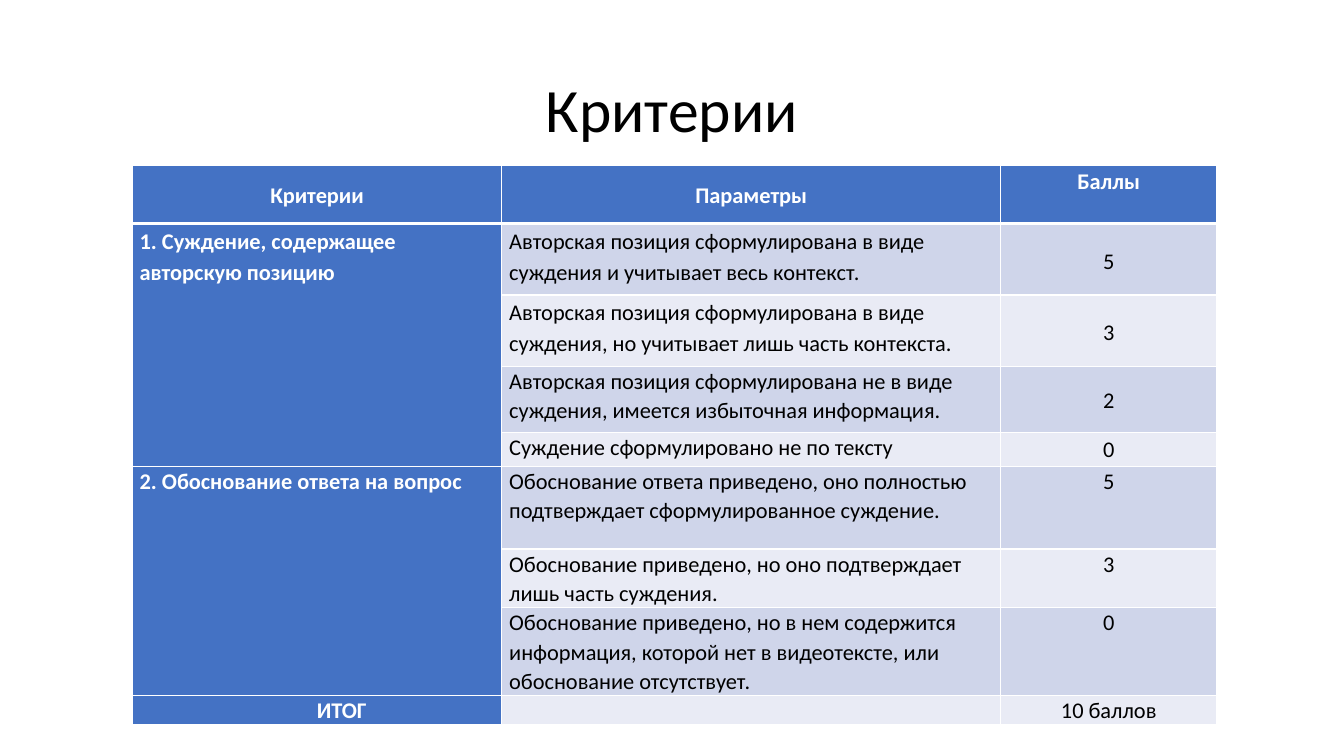
from dataclasses import dataclass
from typing import Optional

import pptx
import pptx.dml.color
import pptx.enum.text
import pptx.oxml
import pptx.oxml.ns
import pptx.table
import pptx.text.text
import pptx.util

RGBColor = pptx.dml.color.RGBColor
Align = pptx.enum.text.PP_ALIGN
Anchor = pptx.enum.text.MSO_ANCHOR

BLUE = RGBColor(0x44, 0x72, 0xC4)
BAND_DARK = RGBColor(0xCF, 0xD5, 0xEA)
BAND_LIGHT = RGBColor(0xE9, 0xEB, 0xF5)
WHITE = RGBColor(0xFF, 0xFF, 0xFF)
BLACK = RGBColor(0x00, 0x00, 0x00)

FONT = "Calibri"
TITLE_SIZE = 44
TABLE_SIZE = 16
NORMAL_SPACING = 1.07
WIDE_SPACING = 1.15
EMU_PER_PX = 9525
TABLE_LEFT, TABLE_TOP = 126, 158
COLUMN_WIDTHS = (352, 475, 206)
HEADER_HEIGHT, TOTAL_HEIGHT = 55, 24
TOTAL_INDENT = 47
CELL_MARGIN = 7


@dataclass(frozen=True)
class CellStyle:
    fill: RGBColor
    color: RGBColor = BLACK
    bold: bool = False
    align: Align = Align.LEFT
    anchor: Anchor = Anchor.TOP
    spacing: float = NORMAL_SPACING


@dataclass(frozen=True)
class Level:
    parameter: str
    score: str
    height: int
    spacing: float = NORMAL_SPACING


@dataclass(frozen=True)
class Criterion:
    name: str
    spacing: float
    score_anchor: Anchor
    levels: tuple[Level, ...]


HEADERS = (
    ("Критерии", Anchor.MIDDLE),
    ("Параметры", Anchor.MIDDLE),
    ("Баллы", Anchor.TOP),
)
CRITERIA = (
    Criterion("1. Суждение, содержащее авторскую позицию", WIDE_SPACING, Anchor.MIDDLE, (
        Level("Авторская позиция сформулирована в виде суждения и учитывает весь контекст.",
              "5", 68, WIDE_SPACING),
        Level("Авторская позиция сформулирована в виде суждения, но учитывает лишь часть контекста.",
              "3", 68, WIDE_SPACING),
        Level("Авторская позиция сформулирована не в виде суждения, имеется избыточная информация.",
              "2", 63),
        Level("Суждение сформулировано не по тексту", "0", 32),
    )),
    Criterion("2. Обоснование ответа на вопрос", NORMAL_SPACING, Anchor.TOP, (
        Level("Обоснование ответа приведено, оно полностью подтверждает сформулированное суждение.",
              "5", 79),
        Level("Обоснование приведено, но оно подтверждает лишь часть суждения.", "3", 47),
        Level("Обоснование приведено, но в нем содержится информация, которой нет в видеотексте, "
              "или обоснование отсутствует.", "0", 79),
    )),
)


def px(length: int) -> pptx.util.Emu:
    return pptx.util.Emu(length * EMU_PER_PX)


def add_span(para: pptx.text.text._Paragraph, text: str, size: int,
             color: RGBColor, bold: bool = False) -> None:
    span = para.add_run()
    span.text = text
    span.font.name = FONT
    span.font.size = pptx.util.Pt(size)
    span.font.bold = bold
    span.font.color.rgb = color


def set_borders(cell: pptx.table._Cell, top: int = 1, bottom: int = 1) -> None:
    properties = cell._tc.get_or_add_tcPr()
    widths = {"lnL": 1, "lnR": 1, "lnT": top, "lnB": bottom}
    for position, (side, points) in enumerate(widths.items()):
        line = pptx.oxml.parse_xml(
            f'<a:{side} {pptx.oxml.ns.nsdecls("a")} w="{pptx.util.Pt(points)}">'
            f'<a:solidFill><a:srgbClr val="{WHITE}"/></a:solidFill></a:{side}>')
        properties.insert(position, line)


def fill_cell(cell: pptx.table._Cell, text: Optional[str], style: CellStyle) -> None:
    """Format a cell; without text, only keep its empty line at table size."""
    cell.fill.solid()
    cell.fill.fore_color.rgb = style.fill
    cell.margin_left = cell.margin_right = px(CELL_MARGIN)
    cell.margin_top = cell.margin_bottom = 0
    cell.vertical_anchor = style.anchor
    para = cell.text_frame.paragraphs[0]
    para.alignment = style.align
    para.line_spacing = style.spacing
    if text:
        add_span(para, text, TABLE_SIZE, style.color, style.bold)
    else:
        para._p.append(pptx.oxml.parse_xml(
            f'<a:endParaRPr {pptx.oxml.ns.nsdecls("a")} sz="{TABLE_SIZE * 100}"/>'))


def fill_criteria(table: pptx.table.Table) -> None:
    row = 1
    for criterion in CRITERIA:
        first = row
        for level in criterion.levels:
            band = BAND_DARK if row % 2 else BAND_LIGHT
            fill_cell(table.cell(row, 0), criterion.name if row == first else None,
                      CellStyle(BLUE, WHITE, True, spacing=criterion.spacing))
            fill_cell(table.cell(row, 1), level.parameter,
                      CellStyle(band, spacing=level.spacing))
            fill_cell(table.cell(row, 2), level.score,
                      CellStyle(band, align=Align.CENTER, anchor=criterion.score_anchor,
                                spacing=level.spacing))
            row += 1
        table.cell(first, 0).merge(table.cell(row - 1, 0))


def fill_total(table: pptx.table.Table, row: int) -> None:
    label, blank, score = (table.cell(row, column) for column in range(3))
    fill_cell(label, "ИТОГ", CellStyle(BLUE, WHITE, True, Align.CENTER))
    label_properties = label.text_frame.paragraphs[0]._p.get_or_add_pPr()
    label_properties.set("indent", str(px(TOTAL_INDENT)))
    fill_cell(blank, None, CellStyle(BAND_LIGHT))
    fill_cell(score, "10 баллов",
              CellStyle(BAND_LIGHT, align=Align.CENTER, anchor=Anchor.MIDDLE))


def add_criteria_table(page: pptx.slide.Slide) -> None:
    levels = [level for criterion in CRITERIA for level in criterion.levels]
    heights = [HEADER_HEIGHT, *(level.height for level in levels), TOTAL_HEIGHT]
    table = page.shapes.add_table(
        len(heights), len(COLUMN_WIDTHS), px(TABLE_LEFT), px(TABLE_TOP),
        px(sum(COLUMN_WIDTHS)), px(sum(heights))).table
    table.first_row = table.horz_banding = False
    for column, width in zip(table.columns, COLUMN_WIDTHS):
        column.width = px(width)
    for row, height in zip(table.rows, heights):
        row.height = px(height)

    for column, (text, anchor) in enumerate(HEADERS):
        fill_cell(table.cell(0, column), text,
                  CellStyle(BLUE, WHITE, True, Align.CENTER, anchor))
    fill_criteria(table)
    fill_total(table, len(heights) - 1)
    for index, row in enumerate(table.rows):
        for cell in row.cells:
            set_borders(cell, top=3 if index == 1 else 1, bottom=3 if index == 0 else 1)


def format_title(page: pptx.slide.Slide) -> None:
    title = page.shapes.title
    title.left, title.top, title.width, title.height = px(88), px(38), px(1104), px(139)
    title.text_frame.vertical_anchor = Anchor.MIDDLE
    para = title.text_frame.paragraphs[0]
    para.alignment = Align.CENTER
    para.line_spacing = 0.9
    add_span(para, "Критерии", TITLE_SIZE, BLACK)


def main() -> None:
    deck = pptx.Presentation()
    deck.slide_width, deck.slide_height = px(1280), px(720)
    page = deck.slides.add_slide(deck.slide_layouts.get_by_name("Title Only"))
    format_title(page)
    add_criteria_table(page)
    deck.save("out.pptx")


if __name__ == "__main__":
    main()
